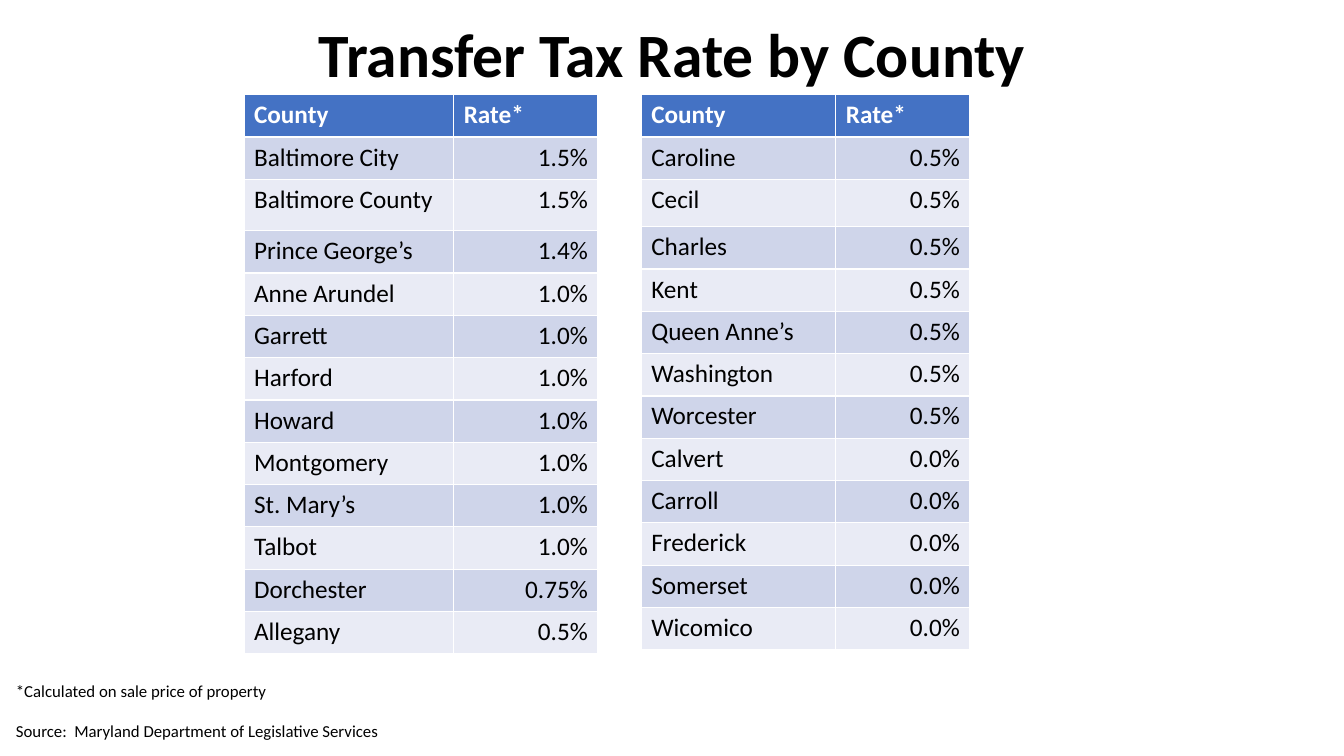
from dataclasses import dataclass

from pptx import Presentation
from pptx.dml.color import RGBColor
from pptx.enum import text as txt
from pptx.util import Inches, Pt


@dataclass(frozen=True)
class Theme:
    font: str = "Calibri"
    ink: str = "000000"
    header_ink: str = "FFFFFF"
    header_fill: str = "4472C4"
    bands: tuple[str, str] = ("CFD5EA", "E9EBF5")
    title_size: int = 44
    table_size: int = 18
    note_size: int = 12


@dataclass(frozen=True)
class RateTable:
    left: float
    columns: tuple[float, float]
    tall_row: float
    rates: tuple[tuple[str, str], ...]


THEME = Theme()
TABLE_TOP = 0.94
ROW_HEIGHT = 0.42
TALL_ROW_INDEX = 2
HEADER = ("County", "Rate*")

# Counties from the highest rate to the lowest
RATE_TABLES = (
    RateTable(2.42, (2.08, 1.43), 0.51, (
        ("Baltimore City", "1.5%"),
        ("Baltimore County", "1.5%"),
        ("Prince George’s", "1.4%"),
        ("Anne Arundel", "1.0%"),
        ("Garrett", "1.0%"),
        ("Harford", "1.0%"),
        ("Howard", "1.0%"),
        ("Montgomery", "1.0%"),
        ("St. Mary’s", "1.0%"),
        ("Talbot", "1.0%"),
        ("Dorchester", "0.75%"),
        ("Allegany", "0.5%"),
    )),
    RateTable(6.36, (1.93, 1.33), 0.47, (
        ("Caroline", "0.5%"),
        ("Cecil", "0.5%"),
        ("Charles", "0.5%"),
        ("Kent", "0.5%"),
        ("Queen Anne’s", "0.5%"),
        ("Washington", "0.5%"),
        ("Worcester", "0.5%"),
        ("Calvert", "0.0%"),
        ("Carroll", "0.0%"),
        ("Frederick", "0.0%"),
        ("Somerset", "0.0%"),
        ("Wicomico", "0.0%"),
    )),
)


def write(paragraph, content: str, *, size: int, color: str = THEME.ink,
          bold: bool = False, align=txt.PP_ALIGN.LEFT,
          line_spacing: float = 1.0, before: float = 0) -> None:
    paragraph.alignment = align
    paragraph.line_spacing = line_spacing
    paragraph.space_before = Pt(before)
    run = paragraph.add_run()
    run.text = content
    run.font.name = THEME.font
    run.font.size = Pt(size)
    run.font.bold = bold
    run.font.color.rgb = RGBColor.from_string(color)


def add_title(slide) -> None:
    title = slide.shapes.title
    title.left, title.top = Inches(0.92), Inches(0.1)
    title.width, title.height = Inches(11.5), Inches(0.94)
    title.text_frame.auto_size = txt.MSO_AUTO_SIZE.NONE
    title.text_frame.vertical_anchor = txt.MSO_ANCHOR.MIDDLE
    write(title.text_frame.paragraphs[0], "Transfer Tax Rate by County",
          size=THEME.title_size, bold=True, align=txt.PP_ALIGN.CENTER,
          line_spacing=0.9)


def add_rate_table(slide, spec_table: RateTable) -> None:
    rows = (HEADER, *spec_table.rates)
    heights = [ROW_HEIGHT] * len(rows)
    heights[TALL_ROW_INDEX] = spec_table.tall_row
    grid = slide.shapes.add_table(
        len(rows), len(HEADER), Inches(spec_table.left), Inches(TABLE_TOP),
        Inches(sum(spec_table.columns)), Inches(sum(heights))).table
    for column, width in zip(grid.columns, spec_table.columns):
        column.width = Inches(width)
    for r, (entries, height) in enumerate(zip(rows, heights)):
        grid.rows[r].height = Inches(height)
        header = r == 0
        fill = THEME.header_fill if header else THEME.bands[(r - 1) % 2]
        for c, entry in enumerate(entries):
            cell = grid.cell(r, c)
            cell.fill.solid()
            cell.fill.fore_color.rgb = RGBColor.from_string(fill)
            is_rate = c == 1 and not header
            write(cell.text_frame.paragraphs[0], entry,
                  size=THEME.table_size, bold=header,
                  color=THEME.header_ink if header else THEME.ink,
                  align=txt.PP_ALIGN.RIGHT if is_rate else txt.PP_ALIGN.LEFT)


def add_notes_on_source(slide) -> None:
    footnote = slide.shapes.add_textbox(
        Inches(0.06), Inches(6.7), Inches(4.86), Inches(0.71)).text_frame
    footnote.word_wrap = True
    write(footnote.paragraphs[0], "*Calculated on sale price of property",
          size=THEME.note_size)
    write(footnote.add_paragraph(),
          "Source:  Maryland Department of Legislative Services",
          size=THEME.note_size, before=14.4)


def main() -> None:
    deck = Presentation()
    deck.slide_width, deck.slide_height = Inches(13.33), Inches(7.5)
    slide = deck.slides.add_slide(deck.slide_layouts.get_by_name("Title Only"))

    # Title, both tables, then the footnote
    add_title(slide)
    for rate_table in RATE_TABLES:
        add_rate_table(slide, rate_table)
    add_notes_on_source(slide)
    deck.save("out.pptx")


if __name__ == "__main__":
    main()
